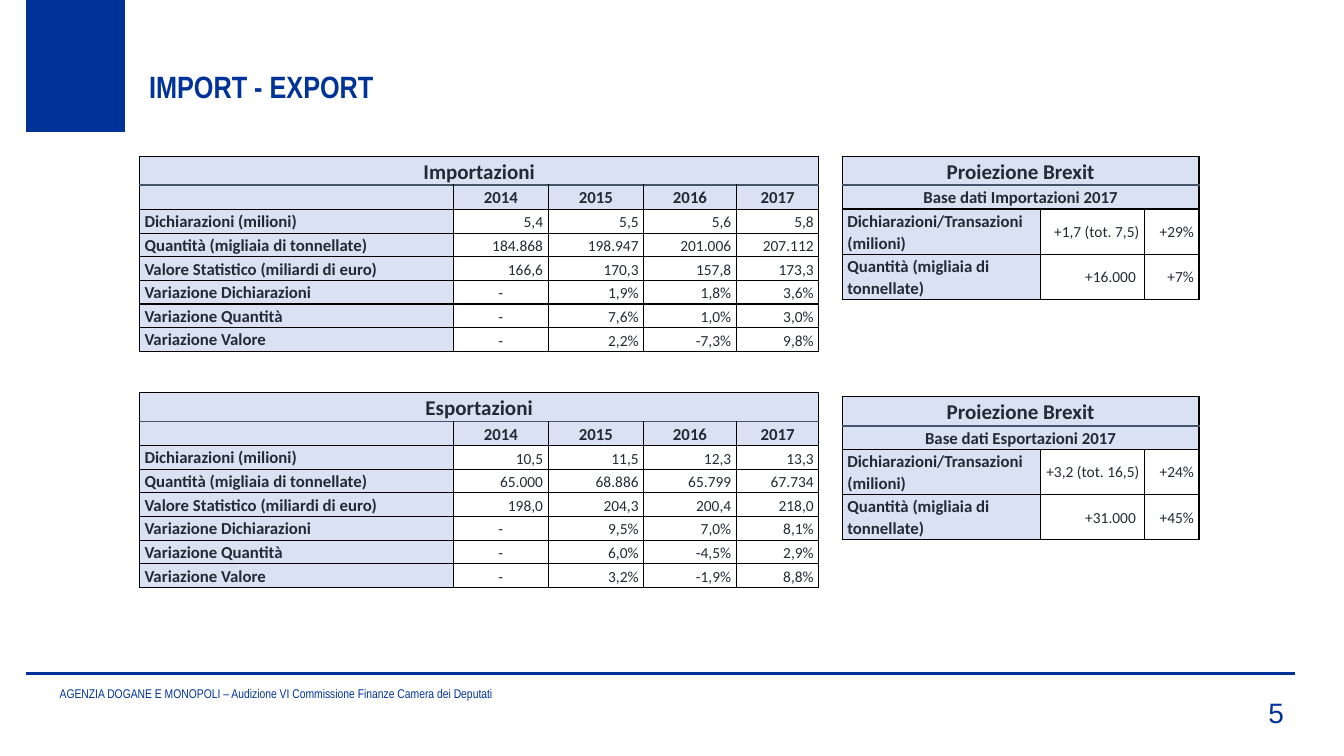
import lxml.etree
import pptx
import pptx.dml.color
import pptx.enum.shapes
import pptx.enum.text
import pptx.oxml.ns
import pptx.util

BLUE = pptx.dml.color.RGBColor(0x00, 0x33, 0x99)
PALE = pptx.dml.color.RGBColor(0xD9, 0xE1, 0xF2)
INK = pptx.dml.color.RGBColor(0x22, 0x2B, 0x35)
SLATE = pptx.dml.color.RGBColor(0x44, 0x54, 0x6A)
BLACK = pptx.dml.color.RGBColor(0x00, 0x00, 0x00)

WIDTH, HEIGHT = pptx.util.Inches(13.33), pptx.util.Inches(7.5)
PLAIN_TABLE_STYLE = "{2D5ABB26-0587-4C30-8999-92F81FD0307C}"
ALIGN = pptx.enum.text.PP_ALIGN
ANCHOR = pptx.enum.text.MSO_ANCHOR
qn = pptx.oxml.ns.qn

# First and last grid column of each cell in a row
TRADE_SPANS = [(0, 0), (1, 1), (2, 3), (4, 5), (6, 7)]
GAP_SPANS = [(0, 0), (1, 2), (3, 4), (5, 6), (7, 7)]
FORECAST_SPANS = [(0, 0), (1, 1), (2, 2)]

YEARS = ["", "2014", "2015", "2016", "2017"]
MEASURES = ["Dichiarazioni (milioni)", "Quantità (migliaia di tonnellate)",
            "Valore Statistico (miliardi di euro)", "Variazione Dichiarazioni",
            "Variazione Quantità", "Variazione Valore"]
TRADE = {
    "Importazioni": [
        ["5,4", "5,5", "5,6", "5,8"],
        ["184.868", "198.947", "201.006", "207.112"],
        ["166,6", "170,3", "157,8", "173,3"],
        ["-", "1,9%", "1,8%", "3,6%"],
        ["-", "7,6%", "1,0%", "3,0%"],
        ["-", "2,2%", "-7,3%", "9,8%"]],
    "Esportazioni": [
        ["10,5", "11,5", "12,3", "13,3"],
        ["65.000", "68.886", "65.799", "67.734"],
        ["198,0", "204,3", "200,4", "218,0"],
        ["-", "9,5%", "7,0%", "8,1%"],
        ["-", "6,0%", "-4,5%", "2,9%"],
        ["-", "3,2%", "-1,9%", "8,8%"]],
}
FORECAST_MEASURES = ["Dichiarazioni/Transazioni (milioni)",
                     "Quantità (migliaia di tonnellate)"]
FORECASTS = {
    "Importazioni": [["+1,7 (tot. 7,5)", "+29%"], ["+16.000 ", "+7%"]],
    "Esportazioni": [["+3,2 (tot. 16,5)", "+24%"], ["+31.000 ", "+45%"]],
}


def percent(left, top, width, height):
    """Turn percentages of the slide's size into a box in EMU."""
    return (round(WIDTH * left / 100), round(HEIGHT * top / 100),
            round(WIDTH * width / 100), round(HEIGHT * height / 100))


def style_paragraph(para, font_name, size, color, bold=False, align=ALIGN.LEFT):
    para.alignment = align
    para.font.name = font_name
    para.font.size = pptx.util.Pt(size)
    para.font.bold = bold
    para.font.color.rgb = color


def add_title(page, box, text):
    title = page.shapes.title
    title.left, title.top, title.width, title.height = box
    frame = title.text_frame
    frame.text = text
    frame.vertical_anchor = ANCHOR.TOP
    style_paragraph(frame.paragraphs[0], "Arial Narrow", 22, BLUE, True)


def add_label(page, box, text, font_name, size, align, bottom_inset):
    frame = page.shapes.add_textbox(*box).text_frame
    frame.word_wrap = True
    frame.vertical_anchor = ANCHOR.BOTTOM
    frame.margin_bottom = pptx.util.Inches(bottom_inset)
    frame.text = text
    style_paragraph(frame.paragraphs[0], font_name, size, BLUE, align=align)


def add_corner_block(page, box):
    block = page.shapes.add_shape(pptx.enum.shapes.MSO_SHAPE.RECTANGLE, *box)
    block.shadow.inherit = False
    block.fill.solid()
    block.fill.fore_color.rgb = BLUE
    block.line.fill.background()


def add_footer_rule(page, box):
    left, top, width, height = box
    rule = page.shapes.add_connector(pptx.enum.shapes.MSO_CONNECTOR.STRAIGHT,
                                     left, top, left + width, top + height)
    rule.line.color.rgb = BLUE
    rule.line.width = pptx.util.Pt(2.25)
    lxml.etree.SubElement(rule.element.spPr, qn("a:effectLst"))


def add_borders(cell, **special):
    """Draw black 1 pt borders; sides named in special are slate and 1.5 pt."""
    properties = cell._tc.get_or_add_tcPr()
    for side in "LRTB":
        color, points = (SLATE, 1.5) if special.get(side) else (BLACK, 1)
        line = lxml.etree.SubElement(properties, qn("a:ln" + side),
                                     w=str(pptx.util.Pt(points)))
        fill = lxml.etree.SubElement(line, qn("a:solidFill"))
        lxml.etree.SubElement(fill, qn("a:srgbClr"), val=str(color))


def write_cell(cell, text, size, bold=False, align=ALIGN.LEFT, anchor=ANCHOR.BOTTOM):
    cell.margin_left = cell.margin_right = pptx.util.Inches(0.05)
    cell.margin_top = cell.margin_bottom = pptx.util.Inches(0.01)
    cell.vertical_anchor = anchor
    cell.text = text
    para = cell.text_frame.paragraphs[0]
    para.line_spacing = 1.07
    style_paragraph(para, "Calibri", size, INK, bold, align)
    if not text:
        lxml.etree.SubElement(para._p, qn("a:endParaRPr"), sz=str(size * 100))


def shade(cell):
    cell.fill.solid()
    cell.fill.fore_color.rgb = PALE


def span_cell(table, row, first, last):
    """Return the cell that covers columns first to last of a row."""
    cell = table.cell(row, first)
    if last > first:
        cell.merge(table.cell(row, last))
    return cell


def add_plain_table(page, box, column_shares, row_shares):
    """Add an unstyled table whose columns and rows split the box by shares."""
    left, top, width, height = box
    table = page.shapes.add_table(len(row_shares), len(column_shares), *box).table
    table.first_row = table.horz_banding = False
    table._tbl.tblPr.find(qn("a:tableStyleId")).text = PLAIN_TABLE_STYLE
    for column, part in zip(table.columns, column_shares):
        column.width = round(width * part / sum(column_shares))
    for row, part in zip(table.rows, row_shares):
        row.height = round(height * part / sum(row_shares))
    return table


def fill_section(table, first_row, spans, heading, subheads, records, value_anchor):
    """Write heading, subheads and records; a lone text spans the row."""
    last = len(table.columns) - 1
    for offset, texts in enumerate([[heading], subheads] + records):
        row = first_row + offset
        for column in range(last + 1):
            add_borders(table.cell(row, column), B=offset == 0, T=offset == 1)
        row_spans = spans if len(texts) > 1 else [(0, last)]
        for (start, end), text in zip(row_spans, texts):
            cell = span_cell(table, row, start, end)
            if offset < 2:
                anchor = ANCHOR.MIDDLE if len(texts) > 1 else ANCHOR.BOTTOM
                write_cell(cell, text, (15, 12)[offset], True, ALIGN.CENTER, anchor)
            elif start == 0:
                write_cell(cell, text, 12, True)
            else:
                align = ALIGN.CENTER if text == "-" else ALIGN.RIGHT
                write_cell(cell, text, 11, align=align, anchor=value_anchor)
            if offset < 2 or start == 0:
                shade(cell)


def add_trade_table(page, box):
    section, gap = [29, 24] + [23.5] * len(MEASURES), [20.5] * 2
    table = add_plain_table(page, box, [312, 94, 62, 33, 19, 73, 30, 52],
                            section + gap + section)
    step = len(section) + len(gap)
    for index, (heading, values) in enumerate(TRADE.items()):
        records = [[name] + row for name, row in zip(MEASURES, values)]
        fill_section(table, index * step, TRADE_SPANS, heading, YEARS, records,
                     ANCHOR.BOTTOM)
    for row in range(len(section), step):
        for column in range(len(table.columns)):
            write_cell(table.cell(row, column), "", 8)
        for start, end in GAP_SPANS:
            span_cell(table, row, start, end)


def add_forecast_table(page, box, flow):
    table = add_plain_table(page, box, [196, 103, 54], [29, 23.5, 45, 45])
    records = [[name] + row for name, row in zip(FORECAST_MEASURES, FORECASTS[flow])]
    fill_section(table, 0, FORECAST_SPANS, "Proiezione Brexit",
                 [f"Base dati {flow} 2017"], records, ANCHOR.MIDDLE)


def main():
    deck = pptx.Presentation()
    deck.slide_width, deck.slide_height = WIDTH, HEIGHT
    page = deck.slides.add_slide(deck.slide_layouts[5])
    add_corner_block(page, percent(1.95, 0, 7.35, 17.47))
    add_footer_rule(page, percent(1.95, 89.07, 94.37, 0))
    add_title(page, percent(10.35, 8.27, 88.07, 6.27), "IMPORT - EXPORT")
    add_label(page, percent(3.7, 88, 70.89, 5.33),
              "AGENZIA DOGANE E MONOPOLI – Audizione VI Commissione Finanze "
              "Camera dei Deputati", "Arial Narrow", 9, ALIGN.LEFT, 0.05)
    add_trade_table(page, percent(10.38, 20.67, 50.56, 57.07))
    add_label(page, percent(87.57, 89.35, 8.7, 7.2), "5", "Arial", 20, ALIGN.RIGHT, 0.01)
    for flow, top in zip(FORECASTS, (20.67, 52.47)):
        add_forecast_table(page, percent(62.67, top, 26.55, 18.93), flow)
    deck.save("out.pptx")


if __name__ == "__main__":
    main()
